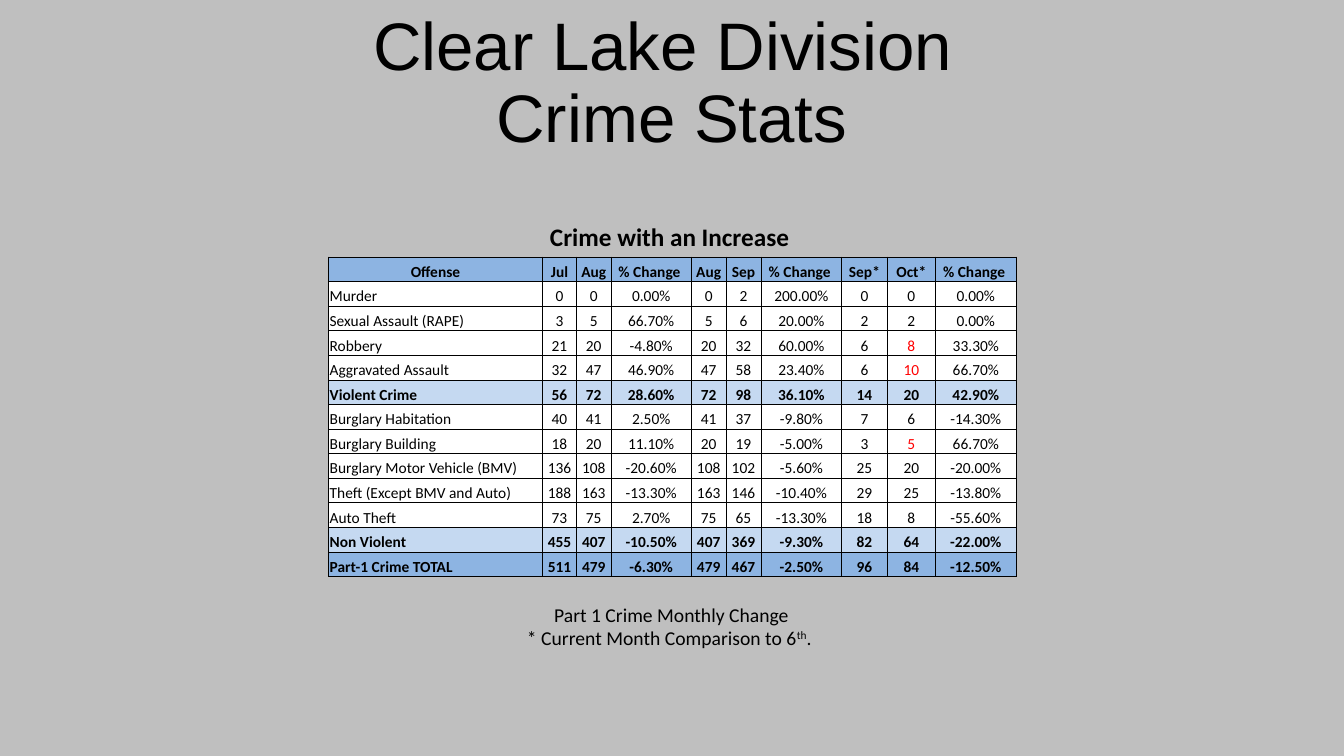
from dataclasses import dataclass

from lxml import etree
from pptx import Presentation
from pptx.dml.color import RGBColor
from pptx.enum.text import MSO_ANCHOR, PP_ALIGN
from pptx.oxml.ns import qn
from pptx.util import Inches, Pt

LEFT, CENTER = PP_ALIGN.LEFT, PP_ALIGN.CENTER
TOP, BOTTOM = MSO_ANCHOR.TOP, MSO_ANCHOR.BOTTOM


@dataclass(frozen=True)
class Theme:
    """Colours, fonts and type sizes of the slide."""

    background: str = "BFBFBF"
    ink: str = "000000"
    increase: str = "FF0000"
    plain: str = "FFFFFF"
    subtotal: str = "C5D9F1"
    total: str = "8DB4E2"
    title_font: str = "Arial"
    body_font: str = "Calibri"
    title_size: int = 48
    heading_size: int = 18
    note_size: int = 14
    table_size: int = 11
    border_width: float = 0.5


THEME = Theme()

HEADER = ["Offense", "Jul", "Aug", "% Change ", "Aug", "Sep", "% Change ",
          "Sep*", "Oct*", "% Change "]
OFFENSES = [
    ("Murder", "0 0 0.00% 0 2 200.00% 0 0 0.00%"),
    ("Sexual Assault (RAPE)", "3 5 66.70% 5 6 20.00% 2 2 0.00%"),
    ("Robbery", "21 20 -4.80% 20 32 60.00% 6 8 33.30%"),
    ("Aggravated Assault", "32 47 46.90% 47 58 23.40% 6 10 66.70%"),
    ("Violent Crime", "56 72 28.60% 72 98 36.10% 14 20 42.90%"),
    ("Burglary Habitation", "40 41 2.50% 41 37 -9.80% 7 6 -14.30%"),
    ("Burglary Building", "18 20 11.10% 20 19 -5.00% 3 5 66.70%"),
    ("Burglary Motor Vehicle (BMV)", "136 108 -20.60% 108 102 -5.60% 25 20 -20.00%"),
    ("Theft (Except BMV and Auto)", "188 163 -13.30% 163 146 -10.40% 29 25 -13.80%"),
    ("Auto Theft", "73 75 2.70% 75 65 -13.30% 18 8 -55.60%"),
    ("Non Violent", "455 407 -10.50% 407 369 -9.30% 82 64 -22.00%"),
    ("Part-1 Crime TOTAL", "511 479 -6.30% 479 467 -2.50% 96 84 -12.50%"),
]
SUMMARY_FILLS = {
    "Offense": THEME.total,
    "Violent Crime": THEME.subtotal,
    "Non Violent": THEME.subtotal,
    "Part-1 Crime TOTAL": THEME.total,
}
COLUMN_WIDTHS = [2.12, 0.34, 0.34, 0.8, 0.34, 0.35, 0.8, 0.45, 0.48, 0.8]
SEP_COLUMN, OCT_COLUMN = 7, 8
CELL_FORMAT = {
    "vertical_anchor": BOTTOM,
    "margin_left": Inches(0.01),
    "margin_right": Inches(0.01),
    "margin_top": Inches(0.01),
    "margin_bottom": 0,
}


def apply_format(target, values):
    """Set each named attribute on the target."""
    for name, value in values.items():
        setattr(target, name, value)


def add_run(paragraph, text, font, size, bold=False, color=THEME.ink):
    """Append a formatted run to a paragraph and return it."""
    run = paragraph.add_run()
    run.text = text
    apply_format(run.font, {"name": font, "size": Pt(size), "bold": bold})
    run.font.color.rgb = RGBColor.from_string(color)
    return run


def add_text_frame(slide, left, top, width, height, anchor=TOP):
    """Add a wrapping text box and return its text frame."""
    box = slide.shapes.add_textbox(Inches(left), Inches(top), Inches(width), Inches(height))
    apply_format(box.text_frame, {"word_wrap": True, "vertical_anchor": anchor})
    return box.text_frame


def add_title(slide):
    """Add the two-line slide title."""
    frame = add_text_frame(slide, 0, 0, 13.33, 1.61, BOTTOM)
    title = frame.paragraphs[0]
    apply_format(title, {"alignment": CENTER, "line_spacing": 0.9})
    add_run(title, "Clear Lake Division ", THEME.title_font, THEME.title_size)
    title.add_line_break()
    add_run(title, "Crime Stats", THEME.title_font, THEME.title_size)


def add_heading(slide):
    """Add the bold heading over the table."""
    heading = add_text_frame(slide, 4.18, 2.15, 4.98, 0.4).paragraphs[0]
    heading.alignment = CENTER
    add_run(heading, "Crime with an Increase ", THEME.body_font, THEME.heading_size, True)


def add_note(slide):
    """Add the note under the table, with its raised ordinal."""
    frame = add_text_frame(slide, 4.75, 5.93, 3.82, 0.57)
    subject, comparison = frame.paragraphs[0], frame.add_paragraph()
    subject.alignment = comparison.alignment = CENTER
    add_run(subject, "Part 1 Crime Monthly Change", THEME.body_font, THEME.note_size)
    for text, baseline in (("* Current Month Comparison to 6", 0), ("th", 30000), (". ", 0)):
        run = add_run(comparison, text, THEME.body_font, THEME.note_size)
        if baseline:
            run.font._element.set("baseline", str(baseline))


def add_borders(cell):
    """Draw a thin line on all four sides of a cell."""
    properties = cell._tc.get_or_add_tcPr()
    for side in ("a:lnL", "a:lnR", "a:lnT", "a:lnB"):
        line = etree.SubElement(properties, qn(side), w=str(Pt(THEME.border_width)))
        fill = etree.SubElement(line, qn("a:solidFill"))
        etree.SubElement(fill, qn("a:srgbClr"), val=THEME.ink)


def fill_cell(cell, text, fill, alignment, bold, color):
    """Write and format one table cell."""
    apply_format(cell, CELL_FORMAT)
    add_borders(cell)
    cell.fill.solid()
    cell.fill.fore_color.rgb = RGBColor.from_string(fill)
    paragraph = cell.text_frame.paragraphs[0]
    paragraph.alignment = alignment
    add_run(paragraph, text, THEME.body_font, THEME.table_size, bold, color)


def add_crime_table(slide):
    """Add the offense table, with rising October counts in red."""
    rows = [HEADER] + [[offense, *figures.split()] for offense, figures in OFFENSES]
    frame = slide.shapes.add_table(len(rows), len(HEADER), Inches(3.26), Inches(2.55),
                                   Inches(sum(COLUMN_WIDTHS)), Inches(3.17))
    table = frame.table
    apply_format(table, {"first_row": False, "horz_banding": False})
    for column, width in zip(table.columns, COLUMN_WIDTHS):
        column.width = Inches(width)
    for row_index, row in enumerate(rows):
        summary = row[0] in SUMMARY_FILLS
        fill = SUMMARY_FILLS.get(row[0], THEME.plain)
        rising = not summary and int(row[OCT_COLUMN]) > int(row[SEP_COLUMN])
        for column_index, text in enumerate(row):
            alignment = LEFT if row_index and column_index == 0 else CENTER
            color = THEME.increase if rising and column_index == OCT_COLUMN else THEME.ink
            fill_cell(table.cell(row_index, column_index), text, fill, alignment, summary, color)


def main():
    """Build the crime statistics slide and save it."""
    deck = Presentation()
    apply_format(deck, {"slide_width": Inches(13.33), "slide_height": Inches(7.5)})
    slide = deck.slides.add_slide(deck.slide_layouts[6])
    slide.background.fill.solid()
    slide.background.fill.fore_color.rgb = RGBColor.from_string(THEME.background)
    add_title(slide)
    add_note(slide)
    add_heading(slide)
    add_crime_table(slide)
    deck.save("out.pptx")


if __name__ == "__main__":
    main()
